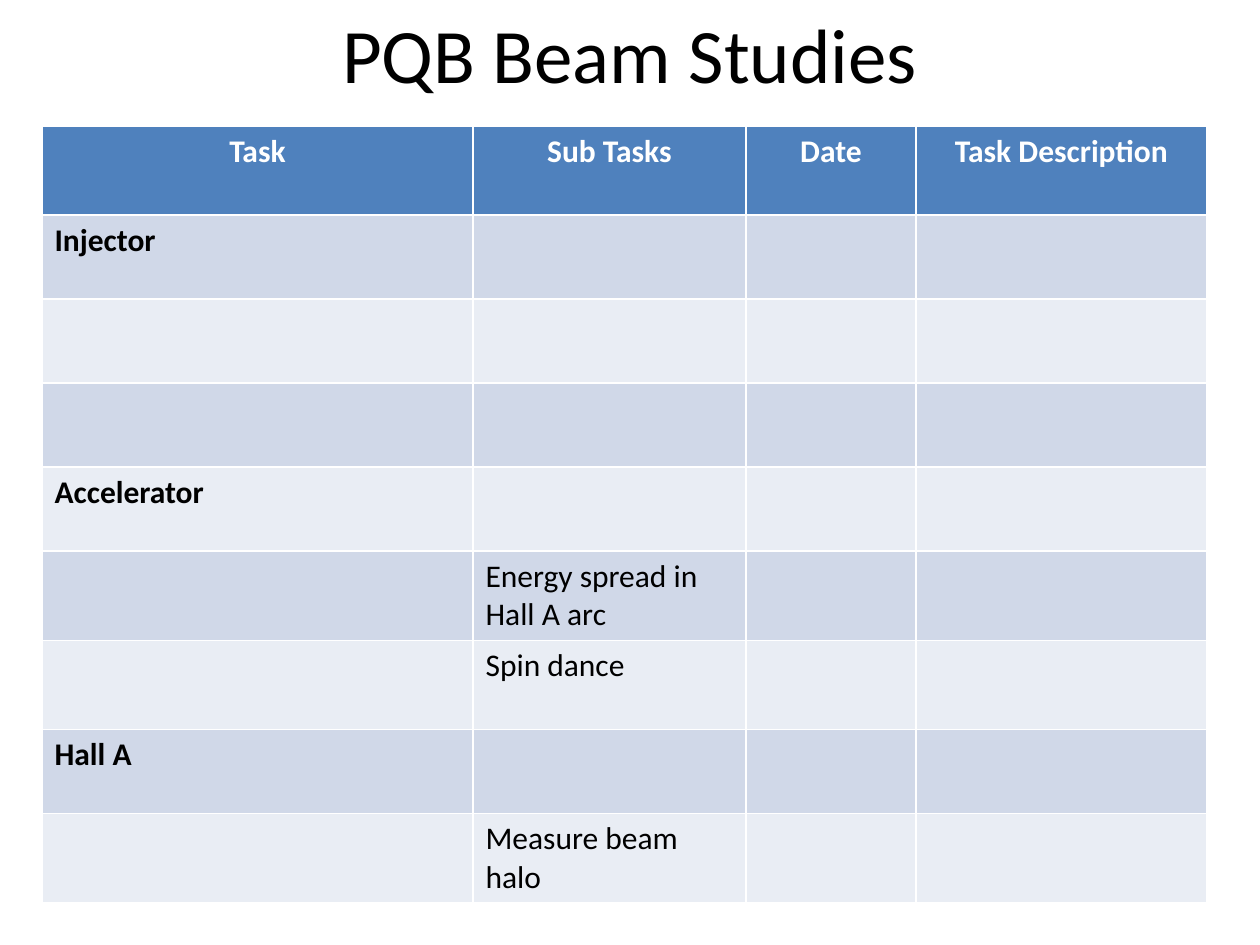
from pptx import Presentation
from pptx.dml.color import RGBColor as RGB
from pptx.enum.text import MSO_ANCHOR as Anchor, PP_ALIGN as Align
from pptx.util import Emu, Pt

HUES = {"head": "4F81BD", "odd": "D0D8E8", "even": "E9EDF4",
        "dark": "000000", "light": "FFFFFF"}


def px(n):
    return Emu(round(n * 914400 / 126))


def write(frame, text, size=18, hue="dark", bold=False, align=Align.LEFT):
    para = frame.paragraphs[0]
    para.alignment = align
    run = para.add_run()
    run.text = text
    font = run.font
    font.name, font.size, font.bold = "Calibri", Pt(size), bold
    font.color.rgb = RGB.from_string(HUES[hue])


deck = Presentation()
deck.slide_width, deck.slide_height = px(1260), px(945)
slide = deck.slides.add_slide(deck.slide_layouts[5])

# Title
title = slide.shapes.title
title.left, title.top, title.width, title.height = px(63), px(0), px(1134), px(105)
title.text_frame.vertical_anchor = Anchor.MIDDLE
write(title.text_frame, "PQB Beam Studies", size=44, align=Align.CENTER)

# Task table: the default style supplies the white rules
heads = ["Task", "Sub Tasks", "Date", "Task Description"]
tasks = [("Injector", ""), ("", ""), ("", ""),
         ("Accelerator", ""), ("", "Energy spread in Hall A arc"), ("", "Spin dance"),
         ("Hall A", ""), ("", "Measure beam halo")]
rows = [heads] + [[*pair, "", ""] for pair in tasks]
wide = [431, 273, 170, 291]
tall = [89, 84, 84, 84, 84, 89, 89, 84, 89]

table = slide.shapes.add_table(len(rows), len(wide), px(42), px(126),
                               px(sum(wide)), px(sum(tall))).table
for col, width in zip(table.columns, wide):
    col.width = px(width)
for r, (row, height) in enumerate(zip(rows, tall)):
    table.rows[r].height = px(height)
    band = "head" if r == 0 else "odd" if r % 2 else "even"
    for c, text in enumerate(row):
        cell = table.cell(r, c)
        cell.fill.solid()
        cell.fill.fore_color.rgb = RGB.from_string(HUES[band])
        if r == 0:
            write(cell.text_frame, text, hue="light", bold=True, align=Align.CENTER)
        elif text:
            write(cell.text_frame, text, bold=c == 0)

deck.save("out.pptx")
